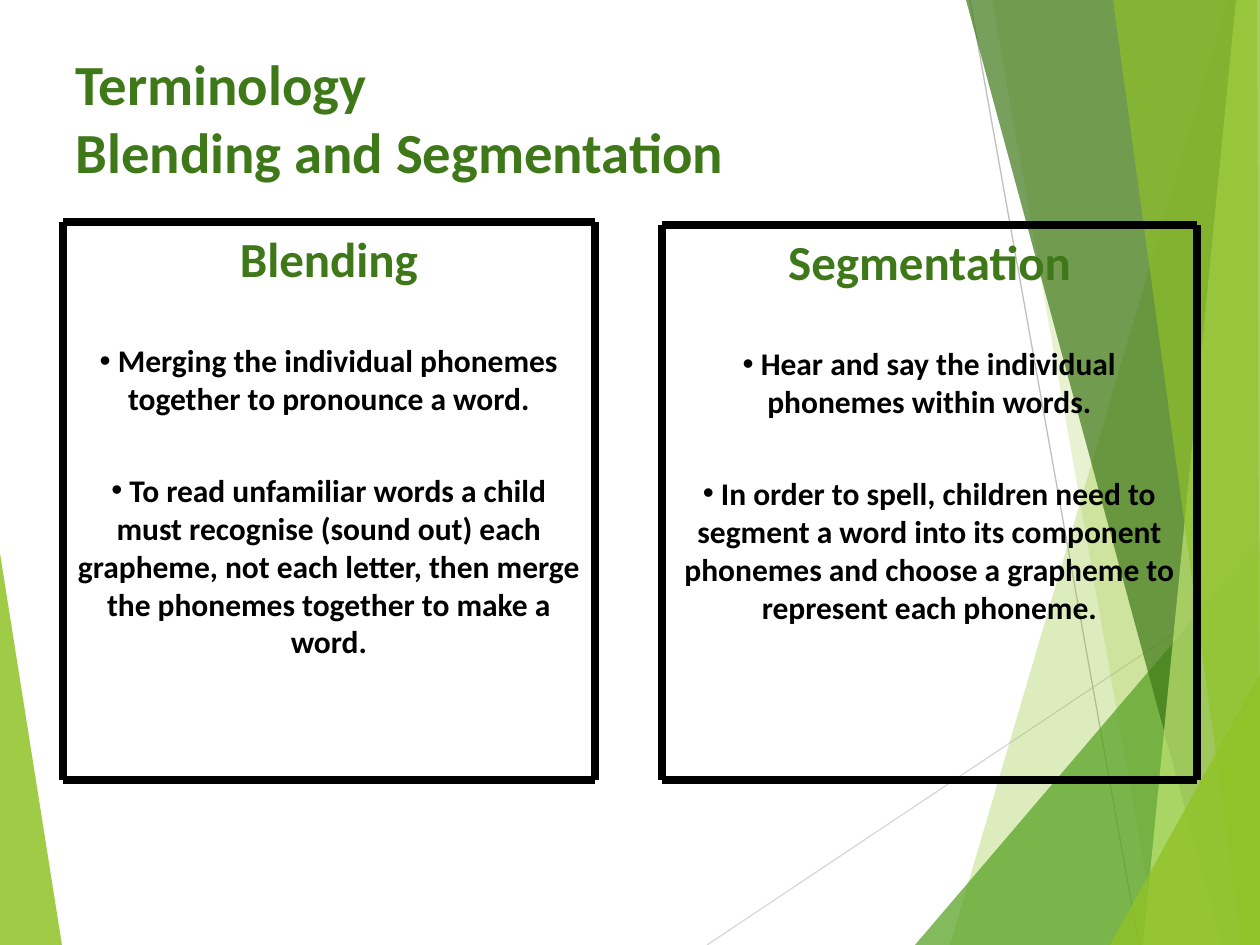
import pptx
import pptx.dml.color
import pptx.enum.shapes
import pptx.enum.text
import pptx.oxml
import pptx.oxml.ns
import pptx.util
from dataclasses import dataclass
from lxml import etree

PX = 914400 / 126
SLIDE_WIDTH, SLIDE_HEIGHT = 1260, 945


@dataclass(frozen=True)
class Theme:
    font: str = "Calibri"
    bullet_font: str = "Arial"
    heading: str = "3F7819"
    body: str = "000000"
    lime: str = "90C226"
    green: str = "54A021"
    forest: str = "3F7819"
    pale: str = "C0E474"
    light_rule: str = "D9D9D9"
    rule: str = "BFBFBF"
    title_size: float = 32.4
    heading_size: float = 28
    body_size: float = 18
    rule_width: float = 0.75
    frame_width: float = 4.5


THEME = Theme()

HAIRLINES = [
    ((707, 945), (1260, 576), THEME.light_rule),
    ((970, 0), (1139, 945), THEME.rule),
]

# Corner points, colour, opacity in percent; from back to front
FACETS = [
    ([(1228, 0), (950, 945), (1260, 945), (1260, 0)], THEME.lime, 30),
    ([(992, 0), (1158, 945), (1260, 945), (1260, 0)], THEME.lime, 20),
    ([(915, 945), (1260, 541), (1260, 945)], THEME.green, 72),
    ([(966, 0), (1222, 945), (1260, 945), (1260, 0)], THEME.forest, 70),
    ([(1236, 0), (1143, 945), (1260, 945), (1260, 0)], THEME.pale, 70),
    ([(1113, 0), (1242, 945), (1260, 945), (1257, 0)], THEME.lime, 65),
    ([(1110, 945), (1260, 674), (1260, 945)], THEME.lime, 80),
]
LEFT_FACET = ([(0, 553), (62, 945), (0, 945)], THEME.lime, 85)

# Left, top, width, height, heading, points
PANELS = [
    (63, 222, 532, 558, "Blending", [
        " Merging the individual phonemes together to pronounce a word.",
        " To read unfamiliar words a child must recognise (sound out) each "
        "grapheme, not each letter, then merge the phonemes together to make a word.",
    ]),
    (662, 225, 535, 555, "Segmentation", [
        " Hear and say the individual phonemes within words.",
        " In order to spell, children need to segment a word into its component "
        "phonemes and choose a grapheme to represent each phoneme.",
    ]),
]


def px(value):
    return pptx.util.Emu(round(value * PX))


def rgb(colour):
    return pptx.dml.color.RGBColor.from_string(colour)


def add_line(slide, start, end, colour, width):
    line = slide.shapes.add_connector(
        pptx.enum.shapes.MSO_CONNECTOR.STRAIGHT, *map(px, start + end))
    line.line.color.rgb = rgb(colour)
    line.line.width = pptx.util.Pt(width)
    properties = line.element.find(pptx.oxml.ns.qn("p:spPr"))
    etree.SubElement(properties, pptx.oxml.ns.qn("a:effectLst"))


def add_facet(slide, points, colour, opacity):
    builder = slide.shapes.build_freeform(*points[0], scale=PX)
    builder.add_line_segments(points[1:], close=True)
    facet = builder.convert_to_shape()
    facet.shadow.inherit = False
    facet.line.fill.background()
    facet.fill.solid()
    facet.fill.fore_color.rgb = rgb(colour)
    colour_element = facet.element.find(
        ".//" + pptx.oxml.ns.qn("a:solidFill"))[0]
    alpha = etree.SubElement(colour_element, pptx.oxml.ns.qn("a:alpha"))
    alpha.set("val", str(opacity * 1000))


def format_runs(paragraph, size, colour):
    for run in paragraph.runs:
        run.font.name = THEME.font
        run.font.size = pptx.util.Pt(size)
        run.font.bold = True
        run.font.color.rgb = rgb(colour)


def add_bullet(paragraph):
    properties = paragraph._p.get_or_add_pPr()
    properties.set("marL", "0")
    properties.set("indent", "0")
    font = etree.SubElement(properties, pptx.oxml.ns.qn("a:buFont"))
    font.set("typeface", THEME.bullet_font)
    character = etree.SubElement(properties, pptx.oxml.ns.qn("a:buChar"))
    character.set("char", "•")


def format_title(slide, text):
    """Fill the title placeholder and bring it in front of the facets."""
    title = slide.shapes.title
    title.left, title.top, title.width, title.height = map(px, (63, 40, 1116, 154))
    frame = title.text_frame
    frame.text = text
    frame.word_wrap = True
    frame.auto_size = pptx.enum.text.MSO_AUTO_SIZE.NONE
    frame.vertical_anchor = pptx.enum.text.MSO_ANCHOR.MIDDLE
    paragraph = frame.paragraphs[0]
    paragraph.alignment = pptx.enum.text.PP_ALIGN.LEFT
    format_runs(paragraph, THEME.title_size, THEME.heading)
    title.element.getparent().append(title.element)


def add_frame(slide, left, top, width, height):
    right, bottom = left + width, top + height
    for start, end in [
        ((left, top), (right, top)),
        ((left, bottom), (right, bottom)),
        ((left, top), (left, bottom)),
        ((right, top), (right, bottom)),
    ]:
        add_line(slide, start, end, THEME.body, THEME.frame_width)


def add_panel(slide, left, top, width, height, heading, points):
    box = slide.shapes.add_textbox(*map(px, (left, top, width, height)))
    frame = box.text_frame
    frame.word_wrap = True
    frame.text = "\n".join([heading] + points)
    heading_paragraph, *point_paragraphs = frame.paragraphs
    heading_paragraph.alignment = pptx.enum.text.PP_ALIGN.CENTER
    format_runs(heading_paragraph, THEME.heading_size, THEME.heading)
    for paragraph in point_paragraphs:
        paragraph.alignment = pptx.enum.text.PP_ALIGN.CENTER
        paragraph.space_before = pptx.util.Pt(31)
        add_bullet(paragraph)
        format_runs(paragraph, THEME.body_size, THEME.body)
    add_frame(slide, left, top, width, height)


def main():
    presentation = pptx.Presentation()
    presentation.slide_width = px(SLIDE_WIDTH)
    presentation.slide_height = px(SLIDE_HEIGHT)
    slide = presentation.slides.add_slide(
        presentation.slide_layouts.get_by_name("Title Only"))
    add_facet(slide, *LEFT_FACET)
    for start, end, colour in HAIRLINES:
        add_line(slide, start, end, colour, THEME.rule_width)
    for facet in FACETS:
        add_facet(slide, *facet)
    format_title(slide, "Terminology\vBlending and Segmentation")
    for panel in PANELS:
        add_panel(slide, *panel)
    presentation.save("out.pptx")


if __name__ == "__main__":
    main()
